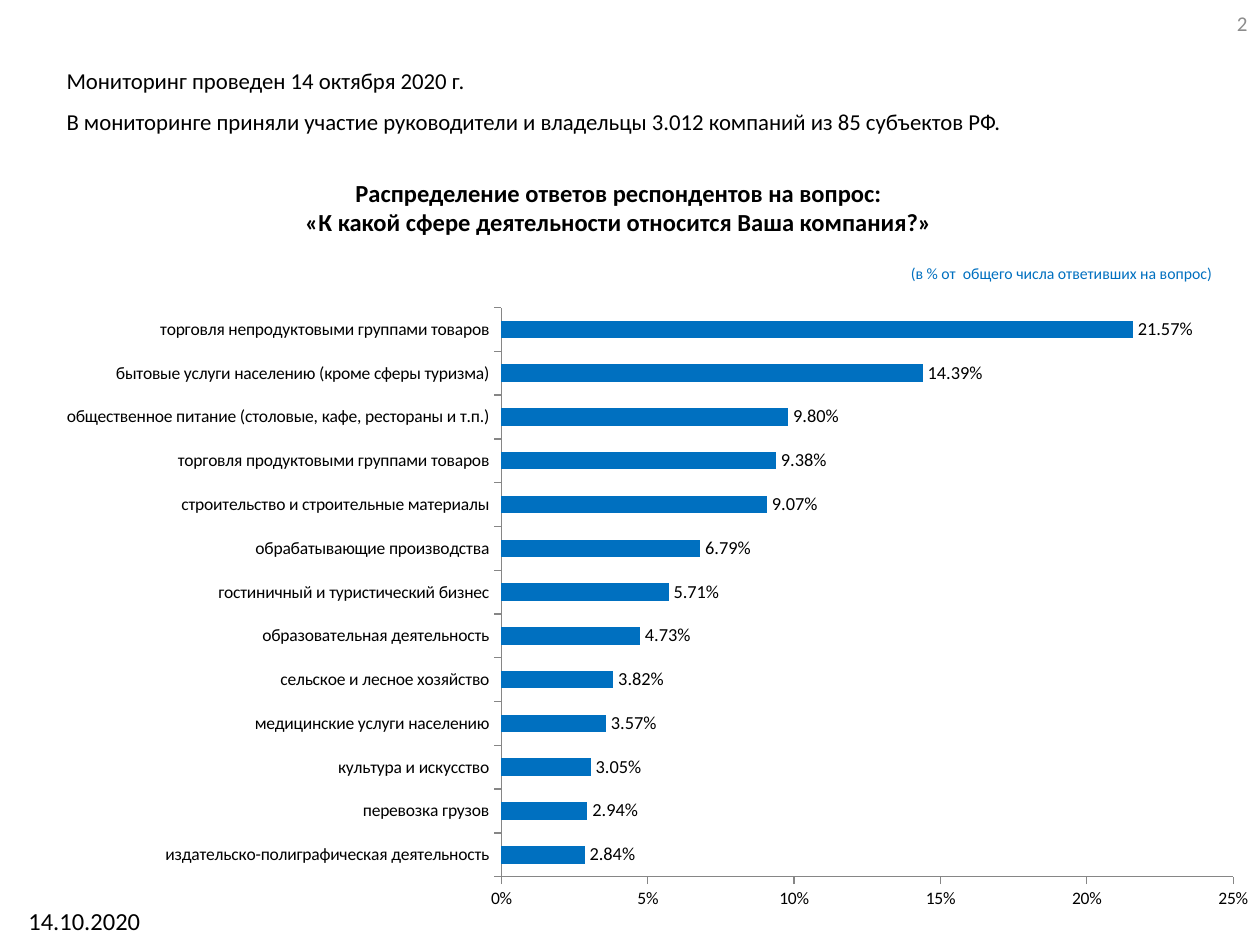
import pptx
import pptx.util
import pptx.chart.data
import pptx.dml.color
import pptx.enum.chart
import pptx.enum.text
import pptx.oxml
import pptx.oxml.ns
from pptx.util import Inches

RGBColor = pptx.dml.color.RGBColor
ALIGN = pptx.enum.text.PP_ALIGN
ANCHOR = pptx.enum.text.MSO_ANCHOR

BLACK = RGBColor(0x00, 0x00, 0x00)
BLUE = RGBColor(0x00, 0x70, 0xC0)
GRAY = RGBColor(0x8C, 0x8C, 0x8C)
AXIS_GRAY = RGBColor(0x86, 0x86, 0x86)

SECTORS = [
    ("издательско-полиграфическая деятельность", 0.0284),
    ("перевозка грузов", 0.0294),
    ("культура и искусство", 0.0305),
    ("медицинские услуги населению", 0.0357),
    ("сельское и лесное хозяйство", 0.0382),
    ("образовательная деятельность", 0.0473),
    ("гостиничный и туристический бизнес", 0.0571),
    ("обрабатывающие производства", 0.0679),
    ("строительство и строительные материалы", 0.0907),
    ("торговля продуктовыми группами товаров", 0.0938),
    ("общественное питание (столовые, кафе, рестораны и т.п.)", 0.098),
    ("бытовые услуги населению (кроме сферы туризма)", 0.1439),
    ("торговля непродуктовыми группами товаров", 0.2157),
]


class SlideBuilder:
    font = "Calibri"

    def __init__(self, s):
        self.s = s

    def style(self, font, size, color=BLACK, bold=False):
        font.name = self.font
        font.size = pptx.util.Pt(size)
        font.bold = bold
        font.color.rgb = color

    def text(self, box, paragraphs, size, color=BLACK, bold=False,
             align=ALIGN.LEFT, anchor=ANCHOR.TOP, after=0, wrap=True):
        """Each paragraph is a list of lines joined by line breaks."""
        sp = self.s.shapes.add_textbox(*map(Inches, box))
        tf = sp.text_frame
        tf.word_wrap = wrap
        tf.vertical_anchor = anchor
        for i, lines in enumerate(paragraphs):
            p = tf.add_paragraph() if i else tf.paragraphs[0]
            p.alignment = align
            p.space_after = pptx.util.Pt(after)
            for j, line in enumerate(lines):
                if j:
                    p.add_line_break()
                r = p.add_run()
                r.text = line
                self.style(r.font, size, color, bold)

    def bar_chart(self, box, rows, plot):
        data = pptx.chart.data.CategoryChartData(number_format="0.00%")
        data.categories = [name for name, share in rows]
        data.add_series("Доля ответов", [share for name, share in rows])
        kind = pptx.enum.chart.XL_CHART_TYPE.BAR_CLUSTERED
        frame = self.s.shapes.add_chart(kind, *map(Inches, box), data)
        chart = frame.chart
        chart.has_legend = False
        chart.has_title = False
        self.style(chart.font, 10)

        # Axes
        for axis in (chart.category_axis, chart.value_axis):
            axis.has_major_gridlines = False
            axis.major_tick_mark = pptx.enum.chart.XL_TICK_MARK.OUTSIDE
            axis.format.line.color.rgb = AXIS_GRAY
            self.style(axis.tick_labels.font, 10)
        values = chart.value_axis
        values.minimum_scale, values.maximum_scale = 0, 0.25
        values.major_unit = 0.05
        values.tick_labels.number_format = "0%"
        values.tick_labels.number_format_is_linked = False

        # Bars and their labels
        bars = chart.plots[0]
        bars.gap_width = 150
        bars.vary_by_categories = False
        fill = bars.series[0].format.fill
        fill.solid()
        fill.fore_color.rgb = BLUE
        bars.has_data_labels = True
        labels = bars.data_labels
        labels.show_value = True
        labels.number_format = "0.00%"
        labels.number_format_is_linked = False
        labels.position = pptx.enum.chart.XL_LABEL_POSITION.OUTSIDE_END
        self.style(labels.font, 10.5)
        self.place_plot(chart, plot)

    def place_plot(self, chart, plot):
        """Fix the inner plot area, given as fractions of the chart."""
        qn = pptx.oxml.ns.qn
        area = chart.element.find(".//" + qn("c:plotArea"))
        for old in area.findall(qn("c:layout")):
            area.remove(old)
        settings = [("layoutTarget", "inner"), ("xMode", "edge"),
                    ("yMode", "edge"), *zip("xywh", plot)]
        items = "".join(f'<c:{tag} val="{val}"/>' for tag, val in settings)
        area.insert(0, pptx.oxml.parse_xml(
            f'<c:layout {pptx.oxml.ns.nsdecls("c")}>'
            f"<c:manualLayout>{items}</c:manualLayout></c:layout>"))


def main():
    prs = pptx.Presentation()
    prs.slide_width, prs.slide_height = Inches(10), Inches(7.5)
    b = SlideBuilder(prs.slides.add_slide(prs.slide_layouts[6]))

    # Heading and survey facts
    b.text((0.41, 1.24, 9, 0.81),
           [["Распределение ответов респондентов на вопрос:",
             "«К какой сфере деятельности относится Ваша компания?»"]],
           14, bold=True, align=ALIGN.CENTER, anchor=ANCHOR.MIDDLE)
    b.text((7.13, 2.04, 2.61, 0.25),
           [["(в % от  общего числа ответивших на вопрос)"]],
           9, BLUE, wrap=False)
    b.text((0.43, 0.48, 9.13, 0.65),
           [["Мониторинг проведен 14 октября 2020 г."],
            ["В мониторинге приняли участие руководители и владельцы "
             "3.012 компаний из 85 субъектов РФ."]],
           13, align=ALIGN.JUSTIFY, after=8)

    # Answers by sector
    b.bar_chart((0.35, 2.29, 9.68, 5.02), SECTORS, (0.375, 0.03, 0.6, 0.9))

    # Page number and date
    b.text((7.67, -0.02, 2.33, 0.4), [["2"]], 12, GRAY,
           align=ALIGN.RIGHT, anchor=ANCHOR.MIDDLE)
    b.text((0, 7.14, 1.34, 0.36), [["14.10.2020"]], 14, align=ALIGN.CENTER)

    prs.save("out.pptx")


if __name__ == "__main__":
    main()
